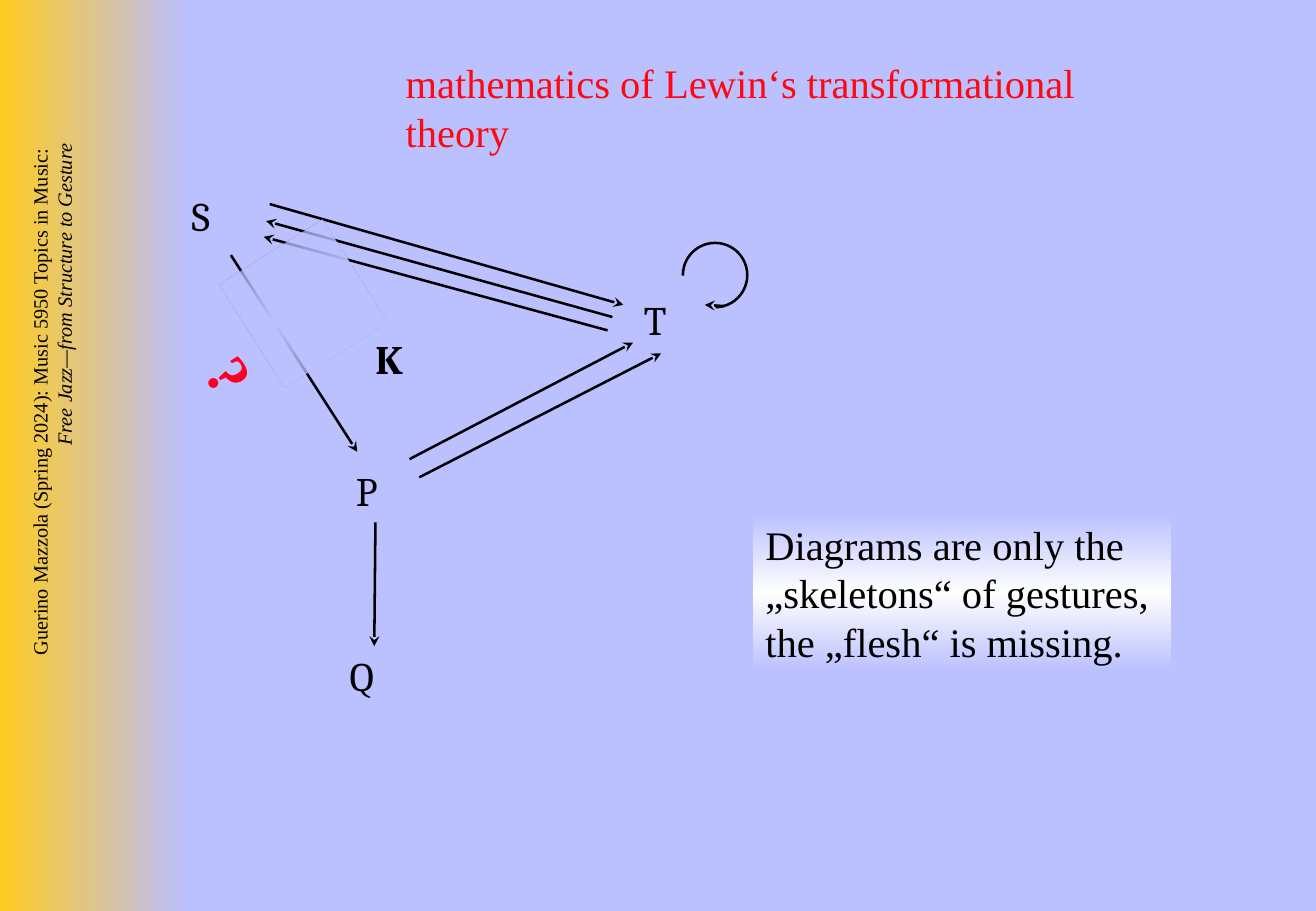
import math
from dataclasses import dataclass

import lxml.etree
import pptx
import pptx.dml.color
import pptx.enum.shapes
import pptx.enum.text
import pptx.oxml
import pptx.oxml.ns
import pptx.util

Inches = pptx.util.Inches
Pt = pptx.util.Pt
RGBColor = pptx.dml.color.RGBColor
Shapes = pptx.enum.shapes.MSO_SHAPE
qn = pptx.oxml.ns.qn

LAVENDER = RGBColor(0xBB, 0xC0, 0xFF)
GOLD = RGBColor(0xFF, 0xCB, 0x1F)
WHITE = RGBColor(0xFE, 0xFF, 0xFD)
BLACK = RGBColor(0, 0, 0)
TITLE_RED = RGBColor(0xFF, 0x08, 0x11)
QUERY_RED = RGBColor(0xFB, 0x00, 0x24)
SERIF = "Times New Roman"
LETTER_FONT = "Cambria"
TILT = 57.7


@dataclass
class Label:
    lines: list[str]
    left: float
    top: float
    width: float
    height: float = 0.5
    font: str = SERIF
    size: int = 24
    color: RGBColor = BLACK
    bold: bool = False
    italic_last: bool = False
    rotation: float = 0
    align_right: bool = False


@dataclass
class Arrow:
    start: tuple[float, float]
    end: tuple[float, float]


@dataclass
class Stop:
    position: int
    color: RGBColor
    opacity: int = 100


def fill_gradient(shape, stops: list[Stop], angle: float = 0) -> None:
    shape.fill.gradient()
    shape.fill.gradient_angle = angle
    stop_list = shape._element.spPr.find(".//" + qn("a:gsLst"))
    for old_stop in list(stop_list):
        stop_list.remove(old_stop)
    for stop in stops:
        entry = lxml.etree.SubElement(stop_list, qn("a:gs"), pos=str(stop.position * 1000))
        color = lxml.etree.SubElement(entry, qn("a:srgbClr"), val=str(stop.color))
        if stop.opacity < 100:
            lxml.etree.SubElement(color, qn("a:alpha"), val=str(stop.opacity * 1000))


def add_plain_shape(page, kind, left: float, top: float, width: float, height: float):
    shape = page.shapes.add_shape(kind, Inches(left), Inches(top), Inches(width), Inches(height))
    shape.shadow.inherit = False
    shape.line.fill.background()
    return shape


def add_label(page, label: Label) -> None:
    box = page.shapes.add_textbox(
        Inches(label.left), Inches(label.top), Inches(label.width), Inches(label.height))
    box.rotation = label.rotation
    box.text_frame.word_wrap = True
    para = box.text_frame.paragraphs[0]
    if label.align_right:
        para.alignment = pptx.enum.text.PP_ALIGN.RIGHT
    for index, line in enumerate(label.lines):
        if index:
            para.add_line_break()
        span = para.add_run()
        span.text = line
        span.font.name = label.font
        span.font.size = Pt(label.size)
        span.font.bold = label.bold
        span.font.italic = label.italic_last and index == len(label.lines) - 1
        span.font.color.rgb = label.color


def add_arrow(page, arrow: Arrow) -> None:
    line = page.shapes.add_connector(
        pptx.enum.shapes.MSO_CONNECTOR.STRAIGHT,
        *(Inches(value) for value in arrow.start + arrow.end))
    line.line.color.rgb = BLACK
    line.line.width = Pt(1.5)
    lxml.etree.SubElement(line.line._get_or_add_ln(), qn("a:tailEnd"), type="stealth")
    lxml.etree.SubElement(line._element.spPr, qn("a:effectLst"))


def turn_back(point: tuple[float, float], center: tuple[float, float]) -> tuple[float, float]:
    """Undo the tilt, so that the shape's own rotation restores it."""
    angle = math.radians(-TILT)
    across, down = point[0] - center[0], point[1] - center[1]
    return (center[0] + across * math.cos(angle) - down * math.sin(angle),
            center[1] + across * math.sin(angle) + down * math.cos(angle))


def add_flesh(page, outline: list[tuple[float, float]], center: tuple[float, float]) -> None:
    points = [turn_back(point, center) for point in outline]
    builder = page.shapes.build_freeform(*points[0], scale=float(Inches(1)))
    builder.add_line_segments(points[1:], close=True)
    flesh = builder.convert_to_shape()
    flesh.rotation = TILT
    flesh.shadow.inherit = False
    flesh.line.fill.background()
    fill_gradient(flesh, [Stop(0, LAVENDER, 48), Stop(50, LAVENDER), Stop(100, LAVENDER, 48)])


SIDE_TEXT = Label(
    ["Guerino Mazzola (Spring 2024): Music\u00a05950 Topics in Music: ",
     "Free Jazz—from Structure to Gesture"],
    -2.4, 3.66, 5.65, size=12, italic_last=True, rotation=270, align_right=True)
LABELS = [
    Label(["S"], 1.48, 1.52, 0.43, font=LETTER_FONT),
    Label(["P"], 2.83, 3.79, 0.44, font=LETTER_FONT),
    Label(["T"], 5.2, 2.38, 0.43, font=LETTER_FONT),
    Label(["Q"], 2.78, 5.31, 0.44, font=LETTER_FONT),
    Label(["K"], 2.99, 2.7, 0.48, font=LETTER_FONT, bold=True),
    Label(["mathematics of Lewin‘s transformational theory"], 3.24, 0.43, 6.5, color=TITLE_RED),
    Label(["Diagrams are only the ", "„skeletons“ of gestures, ", "the „flesh“ is missing."],
          6.2, 4.23, 3.44, 1.3),
    Label(["?"], 1.68, 2.73, 0.45, 0.7, size=36, color=QUERY_RED, bold=True, rotation=TILT),
]
ARROWS = [
    Arrow((5.96, 2.52), (5.8, 2.51)),
    Arrow((2.22, 1.68), (5.13, 2.51)),
    Arrow((5.04, 2.61), (2.19, 1.82)),
    Arrow((5, 2.72), (2.17, 1.95)),
    Arrow((3.09, 4.3), (3.08, 5.32)),
    Arrow((1.9, 2.1), (2.94, 3.72)),
    Arrow((3.45, 3.93), (5.44, 2.91)),
    Arrow((3.37, 3.78), (5.21, 2.82)),
]
FLESH_OUTLINE = [
    (1.93, 2.1), (2.2, 2.36), (2.42, 2.51), (2.67, 2.54), (2.78, 2.72), (2.7, 2.95),
    (2.78, 3.37), (2.86, 3.57), (2.71, 3.41), (2.44, 3.14), (2.19, 3.14), (2.04, 2.91),
    (2.15, 2.62),
]


def main() -> None:
    deck = pptx.Presentation()
    deck.slide_width, deck.slide_height = Inches(10.83), Inches(7.5)
    page = deck.slides.add_slide(deck.slide_layouts[6])
    page.background.fill.solid()
    page.background.fill.fore_color.rgb = LAVENDER

    # Side band
    band = add_plain_shape(page, Shapes.RECTANGLE, 0, 0, 1.54, 7.5)
    fill_gradient(band, [Stop(0, GOLD), Stop(100, LAVENDER)])
    add_label(page, SIDE_TEXT)

    # Loop at T: a circle with its lower left quarter covered
    loop = add_plain_shape(page, Shapes.OVAL, 5.62, 2, 0.53, 0.53)
    loop.fill.background()
    loop.line.color.rgb = BLACK
    loop.line.width = Pt(1.5)
    cover = add_plain_shape(page, Shapes.RECTANGLE, 5.56, 2.27, 0.33, 0.32)
    cover.fill.solid()
    cover.fill.fore_color.rgb = LAVENDER

    # Arrows, and the flesh over the one from S to P
    for arrow in ARROWS:
        add_arrow(page, arrow)
    add_flesh(page, FLESH_OUTLINE, (2.42, 2.82))

    # Panel behind the remark, then all labels
    panel = add_plain_shape(page, Shapes.RECTANGLE, 6.2, 4.23, 3.44, 1.3)
    fill_gradient(panel, [Stop(0, LAVENDER), Stop(50, WHITE), Stop(100, LAVENDER)], 270)
    for label in LABELS:
        add_label(page, label)

    deck.save("out.pptx")


if __name__ == "__main__":
    main()
